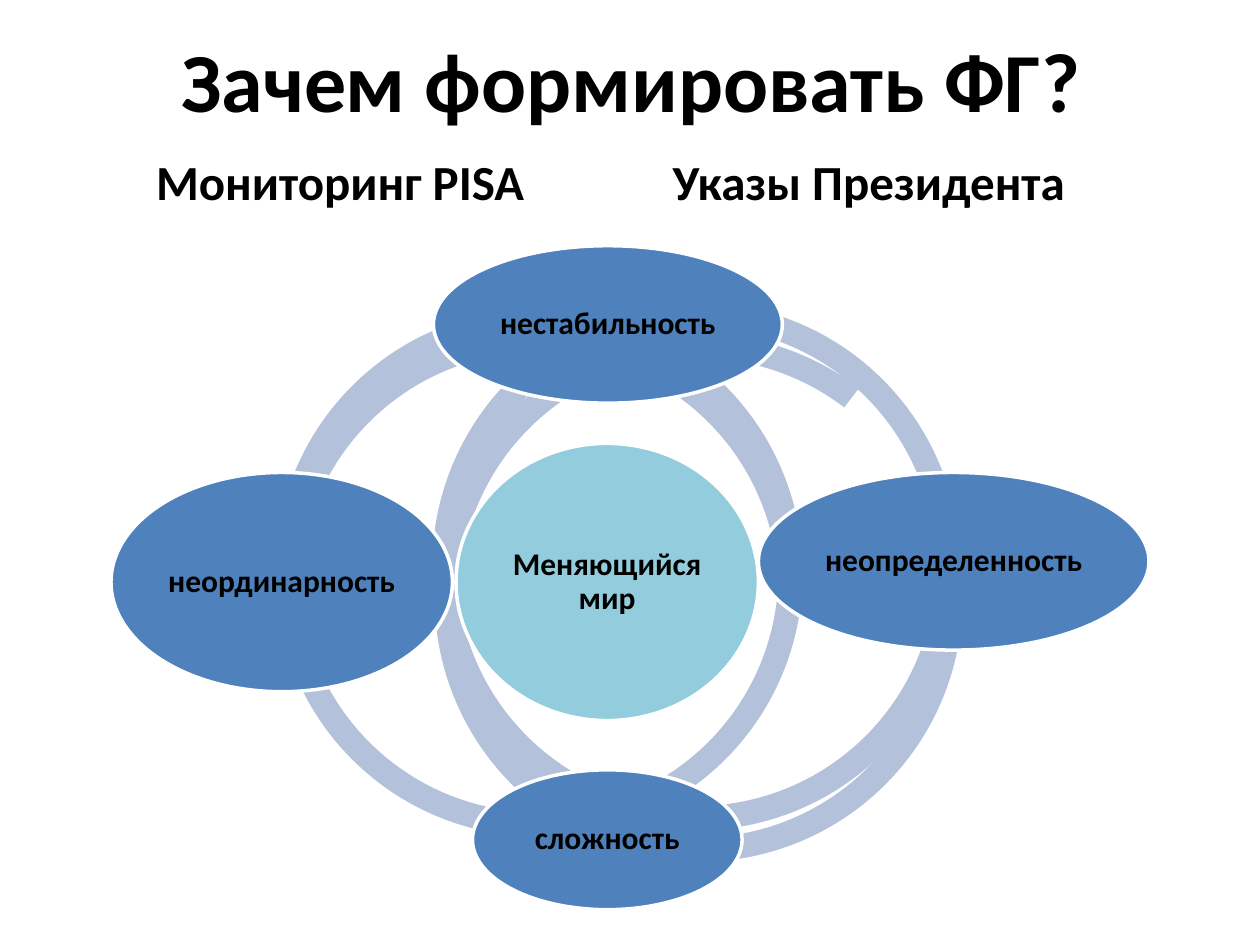
from pptx import Presentation
from pptx.dml.color import RGBColor
from pptx.enum.shapes import MSO_SHAPE
from pptx.enum.text import MSO_ANCHOR, PP_ALIGN
from pptx.util import Pt

BLOCK_ARC = MSO_SHAPE.BLOCK_ARC
OVAL = MSO_SHAPE.OVAL
MIDDLE = MSO_ANCHOR.MIDDLE
CENTER = PP_ALIGN.CENTER
LEFT = PP_ALIGN.LEFT

BLACK = RGBColor(0x00, 0x00, 0x00)
WHITE = RGBColor(0xFF, 0xFF, 0xFF)
BLUE = RGBColor(0x4F, 0x81, 0xBD)
AQUA = RGBColor(0x93, 0xCD, 0xDD)
PALE_BLUE = RGBColor(0xB3, 0xC1, 0xDB)

FONT = "Calibri"
ARC_SIZE = 301.7
ARC_THICKNESS = 0.046
DEGREES_PER_UNIT = 0.6

ARCS = [
    (157, 176.4, 177.95, 285.39),
    (157, 187.2, 74.61, 182.06),
    (248.4, 190.8, 351.73, 110.66),
    (247, 172.8, 249.97, 358.91),
]
OVALS = [
    ("Меняющийся мир", 260.6, 253.4, 172.8, 158.4, AQUA),
    ("нестабильность", 247.7, 140.4, 199.4, 90, BLUE),
    ("неопределенность", 433.4, 270, 223.2, 101.5, BLUE),
    ("сложность", 270, 439.9, 154.1, 79.9, BLUE),
    ("неординарность", 63.4, 270, 195.1, 125.3, BLUE),
]
HEADINGS = [
    ("Мониторинг PISA", 82.1, 226.8),
    ("Указы Президента", 377.3, 241.2),
]


def write_text(frame, text, size, alignment):
    frame.text = text
    paragraph = frame.paragraphs[0]
    paragraph.alignment = alignment
    paragraph.font.name = FONT
    paragraph.font.size = Pt(size)
    paragraph.font.bold = True
    paragraph.font.color.rgb = BLACK
    return paragraph


def add_text(slide, text, left, top, width, height, size, alignment, wrap):
    box = slide.shapes.add_textbox(Pt(left), Pt(top), Pt(width), Pt(height))
    frame = box.text_frame
    frame.word_wrap = wrap
    frame.vertical_anchor = MIDDLE
    write_text(frame, text, size, alignment)


def add_filled_shape(slide, kind, left, top, width, height, color):
    shape = slide.shapes.add_shape(kind, Pt(left), Pt(top), Pt(width), Pt(height))
    shape.shadow.inherit = False
    shape.fill.solid()
    shape.fill.fore_color.rgb = color
    return shape


def add_arc(slide, left, top, start, end):
    arc = add_filled_shape(slide, BLOCK_ARC, left, top, ARC_SIZE, ARC_SIZE, PALE_BLUE)
    arc.line.fill.background()
    arc.adjustments[0] = start / DEGREES_PER_UNIT
    arc.adjustments[1] = end / DEGREES_PER_UNIT
    arc.adjustments[2] = ARC_THICKNESS


def add_oval(slide, text, left, top, width, height, color):
    oval = add_filled_shape(slide, OVAL, left, top, width, height, color)
    oval.line.color.rgb = WHITE
    oval.line.width = Pt(2)
    frame = oval.text_frame
    frame.word_wrap = True
    frame.vertical_anchor = MIDDLE
    frame.margin_left = frame.margin_right = Pt(2)
    frame.margin_top = frame.margin_bottom = Pt(2)
    paragraph = write_text(frame, text, 18, CENTER)
    paragraph.line_spacing = 0.9


def main():
    presentation = Presentation()
    presentation.slide_width = Pt(720)
    presentation.slide_height = Pt(540)
    slide = presentation.slides.add_slide(presentation.slide_layouts[6])

    add_text(slide, "Зачем формировать ФГ?", 36.7, 0, 648, 90, 48, CENTER, True)
    for arc in ARCS:
        add_arc(slide, *arc)
    for oval in OVALS:
        add_oval(slide, *oval)
    for text, left, width in HEADINGS:
        add_text(slide, text, left, 82.8, width, 41, 28, LEFT, False)

    presentation.save("out.pptx")


if __name__ == "__main__":
    main()
